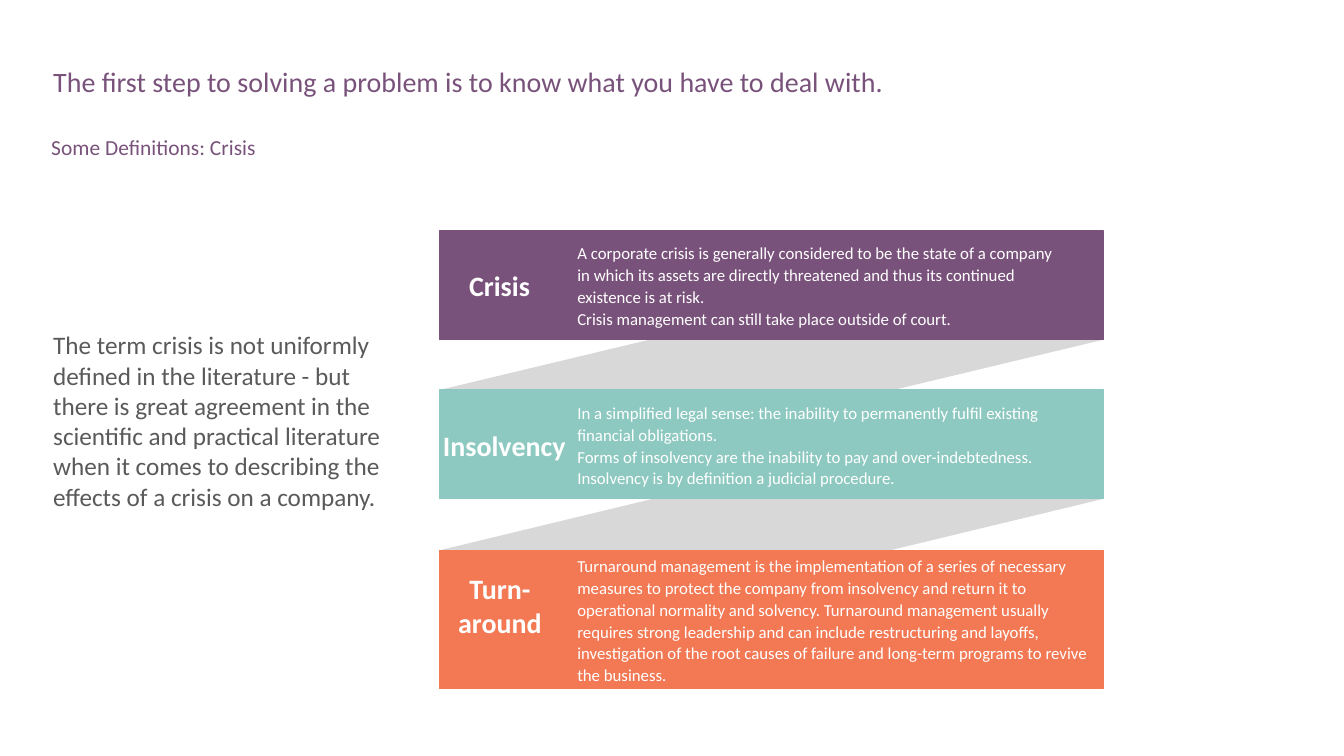
from dataclasses import dataclass
from itertools import pairwise

from lxml import etree
from pptx import Presentation
from pptx.dml.color import RGBColor
from pptx.enum.shapes import MSO_SHAPE
from pptx.enum.text import MSO_ANCHOR, MSO_AUTO_SIZE, PP_ALIGN
from pptx.oxml.ns import qn
from pptx.util import Cm, Pt

RECT = MSO_SHAPE.RECTANGLE
TOP, MIDDLE = MSO_ANCHOR.TOP, MSO_ANCHOR.MIDDLE
LEFT, CENTER = PP_ALIGN.LEFT, PP_ALIGN.CENTER
NO_FIT = MSO_AUTO_SIZE.NONE


@dataclass(frozen=True)
class Theme:
    font: str = "Calibri"
    purple: str = "79527B"
    teal: str = "8DC9C0"
    orange: str = "F27954"
    band: str = "D8D8D8"
    gray: str = "595A59"
    white: str = "FFFFFF"
    title: float = 20
    subtitle: float = 15.3
    body: float = 18
    label: float = 20
    detail: float = 12


THEME = Theme()

# Stage rows, in cm
ROW_LEFT, ROW_WIDTH, BAND_HEIGHT = 11.07, 16.74, 2.74
DETAIL_LEFT = 14.3
LABEL_WIDTH, LABEL_HEIGHT = 3.63, 1.96

# Top, height, colour, label, label centre (x, y), detail width, detail paragraphs
STAGES = [
    (5.82, 2.74, THEME.purple, "Crisis", (12.59, 7.19), 12.75, [
        "A corporate crisis is generally considered to be the state of a company "
        "in which its assets are directly threatened and thus its continued "
        "existence is at risk.",
        "Crisis management can still take place outside of court."]),
    (9.83, 2.74, THEME.teal, "Insolvency", (12.71, 11.23), 12.75, [
        "In a simplified legal sense: the inability to permanently fulfil existing "
        "financial obligations.",
        "Forms of insolvency are the inability to pay and over-indebtedness.",
        "Insolvency is by definition a judicial procedure."]),
    (13.87, 3.48, THEME.orange, "Turn-\varound", (12.6, 15.25), 13.51, [
        "Turnaround management is the implementation of a series of necessary "
        "measures to protect the company from insolvency and return it to "
        "operational normality and solvency. Turnaround management usually "
        "requires strong leadership and can include restructuring and layoffs, "
        "investigation of the root causes of failure and long-term programs to "
        "revive the business."]),
]


def set_all(target, values):
    for name, value in values.items():
        setattr(target, name, value)


def write(shape, paragraphs, size, color, bold=False, align=LEFT, anchor=MIDDLE,
          spacing=1.0):
    tf = shape.text_frame
    set_all(tf, {"word_wrap": True, "auto_size": NO_FIT, "vertical_anchor": anchor,
                 "margin_left": Cm(0.25), "margin_right": Cm(0.25),
                 "margin_top": Cm(0.13), "margin_bottom": Cm(0.13)})
    for i, text in enumerate(paragraphs):
        p = tf.add_paragraph() if i else tf.paragraphs[0]
        p.text = text
        set_all(p, {"alignment": align, "line_spacing": spacing,
                    "space_before": Pt(0)})
        for r in p.runs:
            set_all(r.font, {"name": THEME.font, "size": Pt(size), "bold": bold})
            r.font.color.rgb = RGBColor.from_string(color)


def fill_placeholder(shape, box, text, size, color, **style):
    set_all(shape, dict(zip(("left", "top", "width", "height"), map(Cm, box))))
    write(shape, [text], size, color, **style)
    # Plain text without bullet or indent
    pPr = shape.text_frame.paragraphs[0]._p.get_or_add_pPr()
    pPr.set("marL", "0")
    pPr.set("indent", "0")
    etree.SubElement(pPr, qn("a:buNone"))


def add_text(s, box, paragraphs, size, **style):
    shape = s.shapes.add_textbox(*map(Cm, box))
    write(shape, paragraphs, size, THEME.white, **style)


def add_band(s, upper_top, lower_top):
    right = ROW_LEFT + ROW_WIDTH
    corners = [(ROW_LEFT, lower_top), (right, upper_top),
               (right, upper_top + BAND_HEIGHT), (ROW_LEFT, lower_top + BAND_HEIGHT)]
    points = [(Cm(x), Cm(y)) for x, y in corners]
    builder = s.shapes.build_freeform(*points[0])
    builder.add_line_segments(points[1:], close=True)
    band = builder.convert_to_shape()
    band.shadow.inherit = False
    band.fill.solid()
    band.fill.fore_color.rgb = RGBColor.from_string(THEME.band)
    band.line.fill.background()


def add_stage(s, top, height, color, label, label_center, detail_width, details):
    bar = s.shapes.add_shape(RECT, Cm(ROW_LEFT), Cm(top), Cm(ROW_WIDTH), Cm(height))
    bar.shadow.inherit = False
    bar.fill.solid()
    bar.fill.fore_color.rgb = bar.line.color.rgb = RGBColor.from_string(color)
    bar.line.width = Pt(1)
    x, y = label_center
    add_text(s, (x - LABEL_WIDTH / 2, y - LABEL_HEIGHT / 2, LABEL_WIDTH, LABEL_HEIGHT),
             [label], THEME.label, bold=True, align=CENTER)
    add_text(s, (DETAIL_LEFT, top, detail_width, height), details, THEME.detail,
             spacing=1.09)


def main():
    prs = Presentation()
    prs.slide_width, prs.slide_height = Cm(33.87), Cm(19.05)
    s = prs.slides.add_slide(prs.slide_layouts[3])

    # Headings and introduction
    title, subtitle, intro = s.placeholders
    fill_placeholder(
        title, (1.09, 1.6, 31.85, 1.63),
        "The first step to solving a problem is to know what you have to deal with.",
        THEME.title, THEME.purple, anchor=TOP, spacing=0.9)
    fill_placeholder(subtitle, (1.04, 3.43, 31.9, 0.71), "Some Definitions: Crisis",
                     THEME.subtitle, THEME.purple, anchor=TOP, spacing=0.7)
    fill_placeholder(
        intro, (1.09, 4.55, 8.86, 12.09),
        "The term crisis is not uniformly defined in the literature - but there is "
        "great agreement in the scientific and practical literature when it comes to "
        "describing the effects of a crisis on a company.",
        THEME.body, THEME.gray)

    # Gray bands behind the stages
    for upper, lower in pairwise(STAGES):
        add_band(s, upper[0], lower[0])

    # Stages
    for stage in STAGES:
        add_stage(s, *stage)

    prs.save("out.pptx")


if __name__ == "__main__":
    main()
